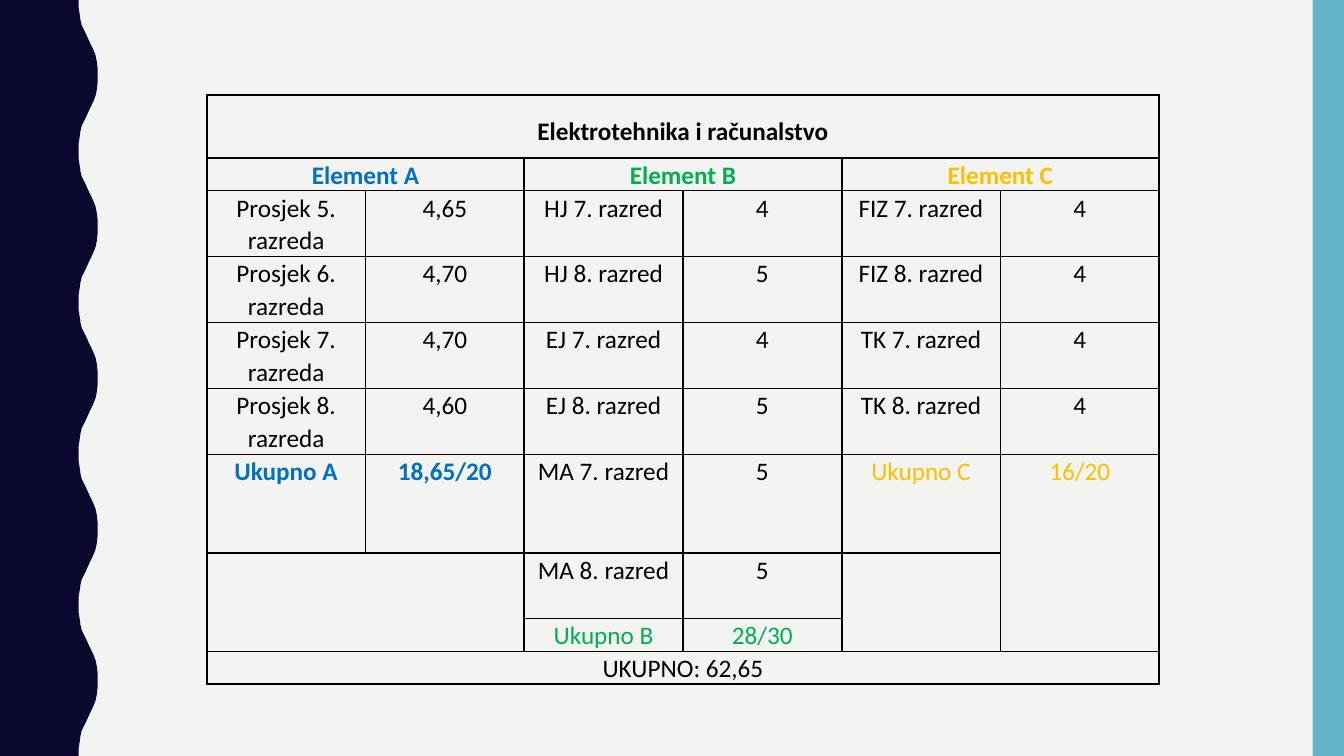
from dataclasses import dataclass

from lxml.etree import SubElement
from pptx import Presentation
from pptx.dml.color import RGBColor
from pptx.enum.shapes import MSO_SHAPE as Preset
from pptx.enum.text import MSO_ANCHOR as Anchor, PP_ALIGN as Align
from pptx.oxml.ns import qn
from pptx.shapes.base import BaseShape
from pptx.slide import Slide
from pptx.table import Table, _Cell as Cell
from pptx.util import Cm, Pt

PAPER = RGBColor(0xF3, 0xF3, 0xF2)
NAVY = RGBColor(0x0B, 0x08, 0x2E)
TEAL = RGBColor(0x62, 0xB4, 0xC6)
BLACK = RGBColor(0x00, 0x00, 0x00)
BLUE = RGBColor(0x00, 0x70, 0xC0)
GREEN = RGBColor(0x00, 0xB0, 0x50)
AMBER = RGBColor(0xFF, 0xC0, 0x00)

FONT = "Calibri"
TABLE_GRID_STYLE = "{5940675A-B579-460E-94D1-54222C63F5DA}"
THIN, THICK = Pt(1), Pt(1.5)

SLIDE_WIDTH, SLIDE_HEIGHT = 33.87, 19.05
WAVE_COUNT = 5
WAVE_PERIOD = SLIDE_HEIGHT / WAVE_COUNT
# Edge of half a wave, in cm, from trough to crest
HALF_WAVE = [
    (1.98, 0), (1.98, 0.18), (2.01, 0.36), (2.03, 0.51), (2.06, 0.64),
    (2.11, 0.74), (2.16, 0.84), (2.21, 0.95), (2.26, 1.06), (2.31, 1.16),
    (2.36, 1.27), (2.41, 1.4), (2.44, 1.55), (2.46, 1.73), (2.46, 1.9),
]

COLUMN_COUNT, COLUMN_WIDTH = 6, 4
ROW_HEIGHTS = [1.59, 0.83, 1.65, 1.65, 1.65, 1.65, 2.49, 1.65, 0.83, 0.83]
LAST_ROW = len(ROW_HEIGHTS) - 1


@dataclass(frozen=True)
class Element:
    """One third of the table: a heading, its grades and their total."""
    heading: str
    color: RGBColor
    grades: list[tuple[str, str]]
    total: tuple[str, str]
    bold_total: bool = False


@dataclass(frozen=True)
class Merge:
    row: int
    column: int
    rows: int
    columns: int


ELEMENTS = [
    Element("Element A", BLUE,
            [("Prosjek 5. razreda", "4,65"), ("Prosjek 6. razreda", "4,70"),
             ("Prosjek 7. razreda", "4,70"), ("Prosjek 8. razreda", "4,60")],
            ("Ukupno A", "18,65/20"), bold_total=True),
    Element("Element B", GREEN,
            [("HJ 7. razred", "4"), ("HJ 8. razred", "5"),
             ("EJ 7. razred", "4"), ("EJ 8. razred", "5"),
             ("MA 7. razred", "5"), ("MA 8. razred", "5")],
            ("Ukupno B", "28/30")),
    Element("Element C", AMBER,
            [("FIZ 7. razred", "4"), ("FIZ 8. razred", "4"),
             ("TK 7. razred", "4"), ("TK 8. razred", "4")],
            ("Ukupno C", "16/20")),
]

MERGES = [
    Merge(0, 0, 1, 6), Merge(LAST_ROW, 0, 1, 6),
    Merge(1, 0, 1, 2), Merge(1, 2, 1, 2), Merge(1, 4, 1, 2),
    Merge(6, 5, 3, 1), Merge(7, 0, 2, 2), Merge(7, 4, 2, 1),
]
# Cells above a thick rule: the totals of A, and the foot of B and C
THICK_BOTTOMS = {(6, 0), (6, 1), (8, 2), (8, 3), (8, 4), (8, 5)}


def paint(shape: BaseShape, color: RGBColor) -> None:
    shape.shadow.inherit = False
    shape.fill.solid()
    shape.fill.fore_color.rgb = color
    shape.line.fill.background()


def add_wavy_band(page: Slide) -> None:
    falling = [(x, WAVE_PERIOD - y) for x, y in reversed(HALF_WAVE)]
    edge = [(x, y + wave * WAVE_PERIOD)
            for wave in range(WAVE_COUNT) for x, y in HALF_WAVE + falling]
    outline = page.shapes.build_freeform(0, 0)
    outline.add_line_segments(
        [(Cm(x), Cm(y)) for x, y in edge + [(0, SLIDE_HEIGHT)]])
    paint(outline.convert_to_shape(), NAVY)


def add_side_strip(page: Slide) -> None:
    width = 0.79
    strip = page.shapes.add_shape(Preset.RECTANGLE, Cm(SLIDE_WIDTH - width), 0,
                                  Cm(width), Cm(SLIDE_HEIGHT))
    paint(strip, TEAL)


def write(cell: Cell, text: str, color: RGBColor = BLACK,
          bold: bool = False) -> None:
    para = cell.text_frame.paragraphs[0]
    para.alignment = Align.CENTER
    para.line_spacing = 1.07
    span = para.add_run()
    span.text = text
    span.font.name = FONT
    span.font.size = Pt(18)
    span.font.bold = bold
    span.font.color.rgb = color


def draw_borders(cell: Cell, row: int, column: int) -> None:
    """Thick lines around each element and the table, thin ones inside."""
    bottom = row + cell.span_height - 1 if cell.is_merge_origin else row
    right = column + cell.span_width - 1 if cell.is_merge_origin else column
    thick_sides = {
        "L": column % 2 == 0,
        "R": right % 2 == 1,
        "T": row == 0,
        "B": bottom == LAST_ROW or (bottom, column) in THICK_BOTTOMS,
    }
    properties = cell._tc.get_or_add_tcPr()
    for index, (side, thick) in enumerate(thick_sides.items()):
        line = SubElement(properties, qn(f"a:ln{side}"),
                          w=str(THICK if thick else THIN))
        fill = SubElement(line, qn("a:solidFill"))
        SubElement(fill, qn("a:srgbClr"), val=str(BLACK))
        properties.insert(index, line)


def format_cells(table: Table) -> None:
    for row in range(len(ROW_HEIGHTS)):
        for column in range(COLUMN_COUNT):
            cell = table.cell(row, column)
            cell.margin_left = cell.margin_right = Cm(0.19)
            cell.margin_top = cell.margin_bottom = 0
            cell.vertical_anchor = Anchor.TOP
            cell.fill.background()
            if not cell.is_spanned:
                draw_borders(cell, row, column)


def fill_element(table: Table, element: Element, column: int) -> None:
    write(table.cell(1, column), element.heading, element.color, bold=True)
    for row, grade in enumerate(element.grades, start=2):
        for offset, text in enumerate(grade):
            write(table.cell(row, column + offset), text)
    total_row = 2 + len(element.grades)
    for offset, text in enumerate(element.total):
        write(table.cell(total_row, column + offset), text, element.color,
              element.bold_total)


def add_score_table(page: Slide) -> None:
    frame = page.shapes.add_table(
        len(ROW_HEIGHTS), COLUMN_COUNT, Cm(5.21), Cm(2.39),
        Cm(COLUMN_COUNT * COLUMN_WIDTH), Cm(sum(ROW_HEIGHTS)))
    table = frame.table
    table.first_row = table.horz_banding = False
    table._tbl.tblPr.find(qn("a:tableStyleId")).text = TABLE_GRID_STYLE
    for column in table.columns:
        column.width = Cm(COLUMN_WIDTH)
    for row, height in zip(table.rows, ROW_HEIGHTS):
        row.height = Cm(height)
    for merge in MERGES:
        table.cell(merge.row, merge.column).merge(
            table.cell(merge.row + merge.rows - 1,
                       merge.column + merge.columns - 1))
    format_cells(table)

    title = table.cell(0, 0)
    title.margin_top = Cm(0.5)
    write(title, "Elektrotehnika i računalstvo", bold=True)
    for index, element in enumerate(ELEMENTS):
        fill_element(table, element, 2 * index)
    write(table.cell(LAST_ROW, 0), "UKUPNO: 62,65")


def main() -> None:
    deck = Presentation()
    deck.slide_width, deck.slide_height = Cm(SLIDE_WIDTH), Cm(SLIDE_HEIGHT)
    page = deck.slides.add_slide(deck.slide_layouts[6])
    page.background.fill.solid()
    page.background.fill.fore_color.rgb = PAPER
    add_wavy_band(page)
    add_side_strip(page)
    add_score_table(page)
    deck.save("out.pptx")


if __name__ == "__main__":
    main()
